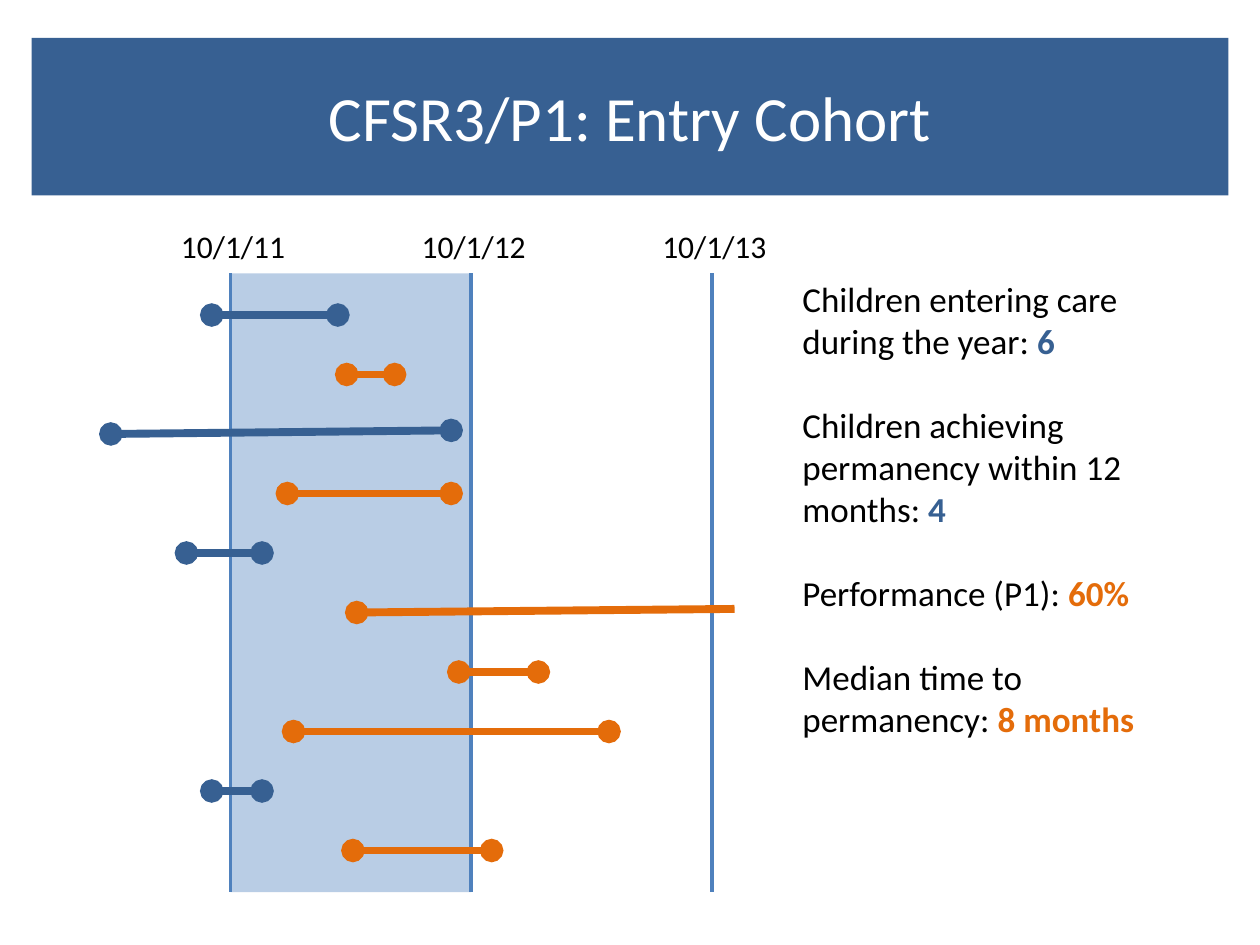
from dataclasses import dataclass
from lxml.etree import SubElement
from pptx import Presentation
from pptx.dml.color import RGBColor
from pptx.enum.shapes import MSO_CONNECTOR, MSO_SHAPE
from pptx.enum.text import MSO_ANCHOR, MSO_AUTO_SIZE, PP_ALIGN
from pptx.oxml.ns import qn
from pptx.util import Inches, Pt


@dataclass(frozen=True)
class Theme:
    font: str = "Calibri"
    blue: RGBColor = RGBColor(0x37, 0x60, 0x92)
    orange: RGBColor = RGBColor(0xE4, 0x6C, 0x0A)
    rule: RGBColor = RGBColor(0x4F, 0x81, 0xBD)
    band: RGBColor = RGBColor(0xB9, 0xCD, 0xE5)
    black: RGBColor = RGBColor(0, 0, 0)
    white: RGBColor = RGBColor(255, 255, 255)
    title: int = 36
    label: int = 18
    body: int = 20
    rule_width: float = 2
    episode_width: float = 4.5


T = Theme()
LEFT, TOP, BOTTOM = 1.83, 2.17, 7.08
YEAR = 1.91
FIRST_ROW, ROW = 2.5, 4.25 / 9

DATES = ["10/1/11", "10/1/12", "10/1/13"]

# Each row: start month, end month, colour, rise in rows, closed
EPISODES = [
    (-0.94, 5.35, T.blue, 0, True),
    (5.79, 8.18, T.orange, 0, True),
    (-5.97, 11, T.blue, 0.06, True),
    (2.83, 11, T.orange, 0, True),
    (-2.2, 1.57, T.blue, 0, True),
    (6.29, 25.13, T.orange, 0.06, False),
    (11.38, 15.35, T.orange, 0, True),
    (3.14, 18.87, T.orange, 0, True),
    (-0.94, 1.57, T.blue, 0, True),
    (6.1, 13.02, T.orange, 0, True),
]

RESULTS = [
    ("Children entering care during the year: ", "6", T.blue),
    ("Children achieving permanency within 12 months: ", "4", T.blue),
    ("Performance (P1): ", "60%", T.orange),
    ("Median time to permanency: ", "8 months", T.orange),
]


def month_x(month):
    return LEFT + month * YEAR / 12


def add_run(p, text, size, color, bold=False):
    r = p.add_run()
    r.text = text
    for name, value in {"name": T.font, "size": Pt(size), "bold": bold}.items():
        setattr(r.font, name, value)
    r.font.color.rgb = color


def add_title(s, text):
    sp = s.shapes.title
    box = {"left": 0.25, "top": 0.3, "width": 9.5, "height": 1.25}
    for name, value in box.items():
        setattr(sp, name, Inches(value))
    sp.fill.solid()
    sp.fill.fore_color.rgb = T.blue
    tf = sp.text_frame
    tf.vertical_anchor = MSO_ANCHOR.MIDDLE
    p = tf.paragraphs[0]
    p.alignment = PP_ALIGN.CENTER
    add_run(p, text, T.title, T.white)


def add_band(s):
    sp = s.shapes.add_shape(MSO_SHAPE.RECTANGLE, Inches(LEFT), Inches(TOP),
                            Inches(YEAR), Inches(BOTTOM - TOP))
    sp.shadow.inherit = False
    sp.fill.solid()
    sp.fill.fore_color.rgb = T.band
    sp.line.fill.background()


def add_line(s, start, end, color, width, ends=()):
    points = [Inches(v) for v in (*start, *end)]
    cxn = s.shapes.add_connector(MSO_CONNECTOR.STRAIGHT, *points)
    cxn.line.color.rgb = color
    cxn.line.width = Pt(width)
    ln = cxn.line._get_or_add_ln()
    for end_tag in ends:
        SubElement(ln, qn(end_tag), type="oval")
    SubElement(cxn._element.spPr, qn("a:effectLst"))


def add_text_box(s, left, top, width, height, wrap):
    sp = s.shapes.add_textbox(*(Inches(v) for v in (left, top, width, height)))
    tf = sp.text_frame
    tf.word_wrap = wrap
    tf.auto_size = MSO_AUTO_SIZE.SHAPE_TO_FIT_TEXT
    return tf


def add_date(s, year, text):
    x = month_x(12 * year)
    add_line(s, (x, TOP), (x, BOTTOM), T.rule, T.rule_width)
    p = add_text_box(s, x - 0.5, 1.75, 1.04, 0.4, False).paragraphs[0]
    p.alignment = PP_ALIGN.CENTER
    add_run(p, text, T.label, T.black)


def add_episode(s, row, start, end, color, rise, closed):
    y = FIRST_ROW + row * ROW
    ends = ("a:headEnd", "a:tailEnd") if closed else ("a:headEnd",)
    add_line(s, (month_x(start), y), (month_x(end), y - rise * ROW),
             color, T.episode_width, ends)


def add_results(s):
    tf = add_text_box(s, 6.27, 2.15, 2.9, 3.8, True)
    for i, (text, value, color) in enumerate(RESULTS):
        p = tf.add_paragraph() if i else tf.paragraphs[0]
        if i:
            p.space_before = Pt(24)
        add_run(p, text, T.body, T.black)
        add_run(p, value, T.body, color, True)


def main():
    prs = Presentation()
    prs.slide_width, prs.slide_height = Inches(10), Inches(7.5)
    s = prs.slides.add_slide(prs.slide_layouts[5])
    add_title(s, "CFSR3/P1: Entry Cohort")
    add_band(s)
    for year, text in enumerate(DATES):
        add_date(s, year, text)
    for row, episode in enumerate(EPISODES):
        add_episode(s, row, *episode)
    add_results(s)
    prs.save("out.pptx")


if __name__ == "__main__":
    main()
